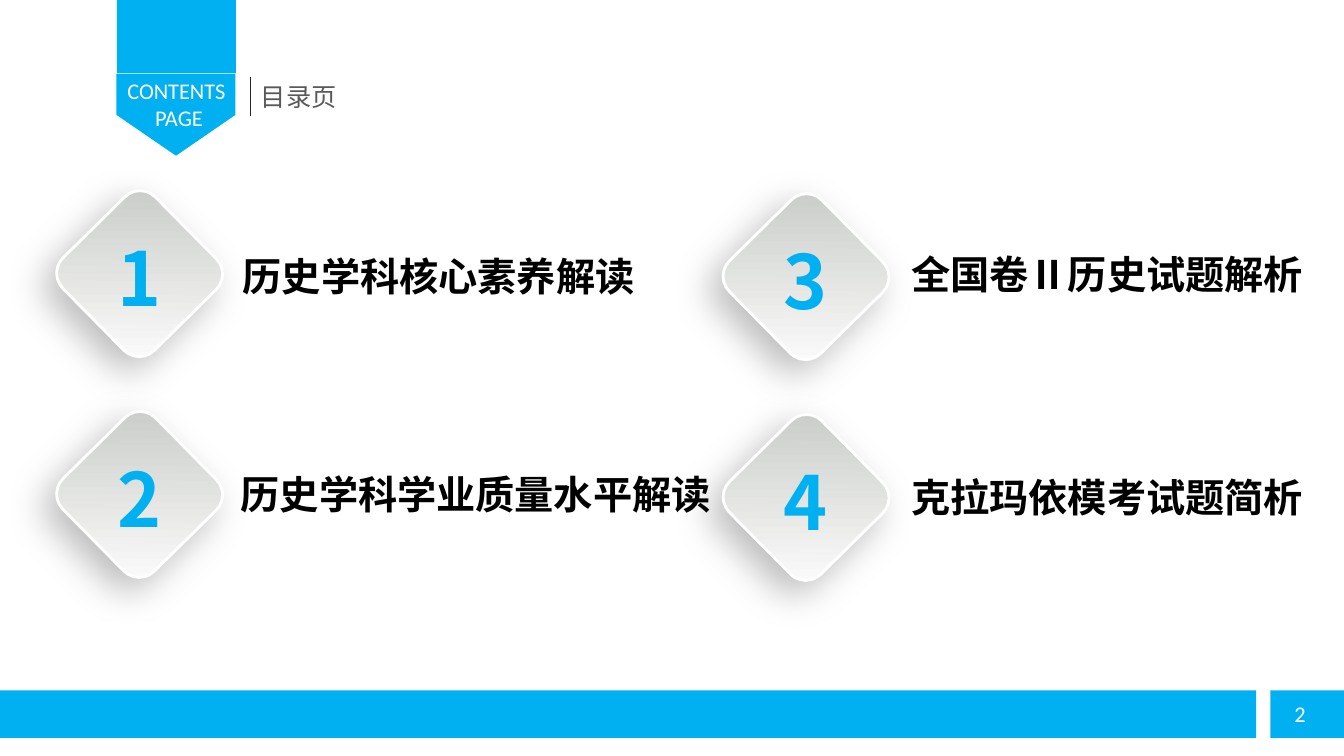
from lxml import etree
from pptx import Presentation, util as u
from pptx.dml.color import RGBColor
from pptx.enum import shapes, text
from pptx.oxml import ns

PX = 9144
COLORS = {
    "blue": "00B0F0", "white": "FFFFFF", "gray": "595959", "dark": "262626",
    "black": "000000", "tile_top": "C9CBC8", "tile_bottom": "FCFCFC",
}
LATIN, CJK = "Calibri", "Noto Sans CJK SC"
TILE = 129
ENTRIES = [
    ("1", 74, 207, "历史学科核心素养解读", 231, 245, 418),
    ("2", 74, 426, "历史学科学业质量水平解读", 229, 462, 497),
    ("3", 735, 210, "全国卷Ⅱ历史试题解析", 894, 243, 439),
    ("4", 735, 429, "克拉玛依模考试题简析", 894, 465, 422),
]


def px(*lengths):
    """Turn px lengths into EMU."""
    return [u.Emu(n * PX) for n in lengths]


def rgb(name):
    """Look up a named colour."""
    return RGBColor.from_string(COLORS[name])


def add_block(parent, kind, box, rotation=0):
    """Add a flat blue shape without outline."""
    sp = parent.add_shape(kind, *px(*box))
    sp.rotation = rotation
    sp.shadow.inherit = False
    sp.fill.solid()
    sp.fill.fore_color.rgb = rgb("blue")
    sp.line.fill.background()
    return sp


def add_text(parent, box, lines, size, color, font=CJK, bold=False,
             center=False, wrap=True, inset=True):
    """Add a text box with one paragraph per line."""
    sp = parent.add_textbox(*px(*box))
    tf = sp.text_frame
    tf.word_wrap = wrap
    tf.auto_size = text.MSO_AUTO_SIZE.SHAPE_TO_FIT_TEXT
    if not inset:
        tf.margin_left = tf.margin_right = tf.margin_top = tf.margin_bottom = 0
    for i, line in enumerate(lines):
        p = tf.add_paragraph() if i else tf.paragraphs[0]
        p.alignment = text.PP_ALIGN.CENTER if center else text.PP_ALIGN.LEFT
        r = p.add_run()
        r.text = line
        r.font.size = u.Pt(size)
        r.font.bold = bold
        r.font.name = font
        r.font.color.rgb = rgb(color)
        ea = etree.SubElement(r.font._element, ns.qn("a:ea"))
        ea.set("typeface", font)


def add_divider(parent, x, top, bottom):
    """Add a thin vertical line."""
    line = parent.add_connector(shapes.MSO_CONNECTOR.STRAIGHT, *px(x, top, x, bottom))
    line.line.color.rgb = rgb("dark")
    line.line.width = u.Pt(0.75)
    etree.SubElement(line._element.spPr, ns.qn("a:effectLst"))


def add_soft_shadow(sp):
    """Give a shape a blurred shadow towards the lower left."""
    sp.shadow.inherit = False
    effects = sp._element.spPr.find(ns.qn("a:effectLst"))
    shadow = etree.SubElement(
        effects, ns.qn("a:outerShdw"), blurRad=str(u.Pt(27)), dist=str(u.Pt(12)),
        dir=str(135 * 60000), algn="ctr", rotWithShape="0")
    color = etree.SubElement(shadow, ns.qn("a:srgbClr"), val=COLORS["black"])
    etree.SubElement(color, ns.qn("a:alpha"), val="26000")


def add_number_tile(parent, number, left, top):
    """Add a grouped diamond tile with its number."""
    group = parent.add_group_shape().shapes
    sp = add_block(group, shapes.MSO_SHAPE.ROUNDED_RECTANGLE,
                   (left, top, TILE, TILE), 315.4)
    sp.fill.gradient()
    sp.fill.gradient_angle = 225
    for stop, name, position in zip(sp.fill.gradient_stops,
                                    ("tile_top", "tile_bottom"), (0, 1)):
        stop.color.rgb = rgb(name)
        stop.position = position
    sp.line.color.rgb = rgb("white")
    sp.line.width = u.Pt(2)
    add_soft_shadow(sp)
    add_text(group, (left + 31, top + 18, 66, 100), [number], 53.3, "blue",
             bold=True, center=True, wrap=False)


def add_header(parent):
    """Add the ribbon and the page title."""
    add_block(parent, shapes.MSO_SHAPE.PENTAGON, (134, 55, 81, 118), 90)
    add_block(parent, shapes.MSO_SHAPE.RECTANGLE, (116, 0, 118, 73))
    add_divider(parent, 248, 76, 115)
    add_text(parent, (249, 76, 159, 40), ["目录页"], 18, "gray")
    add_text(parent, (116, 77, 118, 54), ["CONTENTS", " PAGE"], 16, "white",
             font=LATIN, center=True, inset=False)


def add_footer(parent):
    """Add the bottom bar and the page number."""
    for left, width in ((0, 1246), (1260, 74)):
        add_block(parent, shapes.MSO_SHAPE.RECTANGLE, (left, 685, width, 47))
    add_text(parent, (1274, 690, 46, 37), ["2"], 16, "white", font=LATIN, wrap=False)


def main():
    """Build the contents slide."""
    prs = Presentation()
    prs.slide_width, prs.slide_height = px(1333, 750)
    s = prs.slides.add_slide(prs.slide_layouts[6])
    add_header(s.shapes)
    add_footer(s.shapes)
    for number, left, top, title, title_left, title_top, width in ENTRIES:
        add_number_tile(s.shapes, number, left, top)
        add_text(s.shapes, (title_left, title_top, width, 57), [title], 28,
                 "black", bold=True)
    prs.save("out.pptx")


if __name__ == "__main__":
    main()
